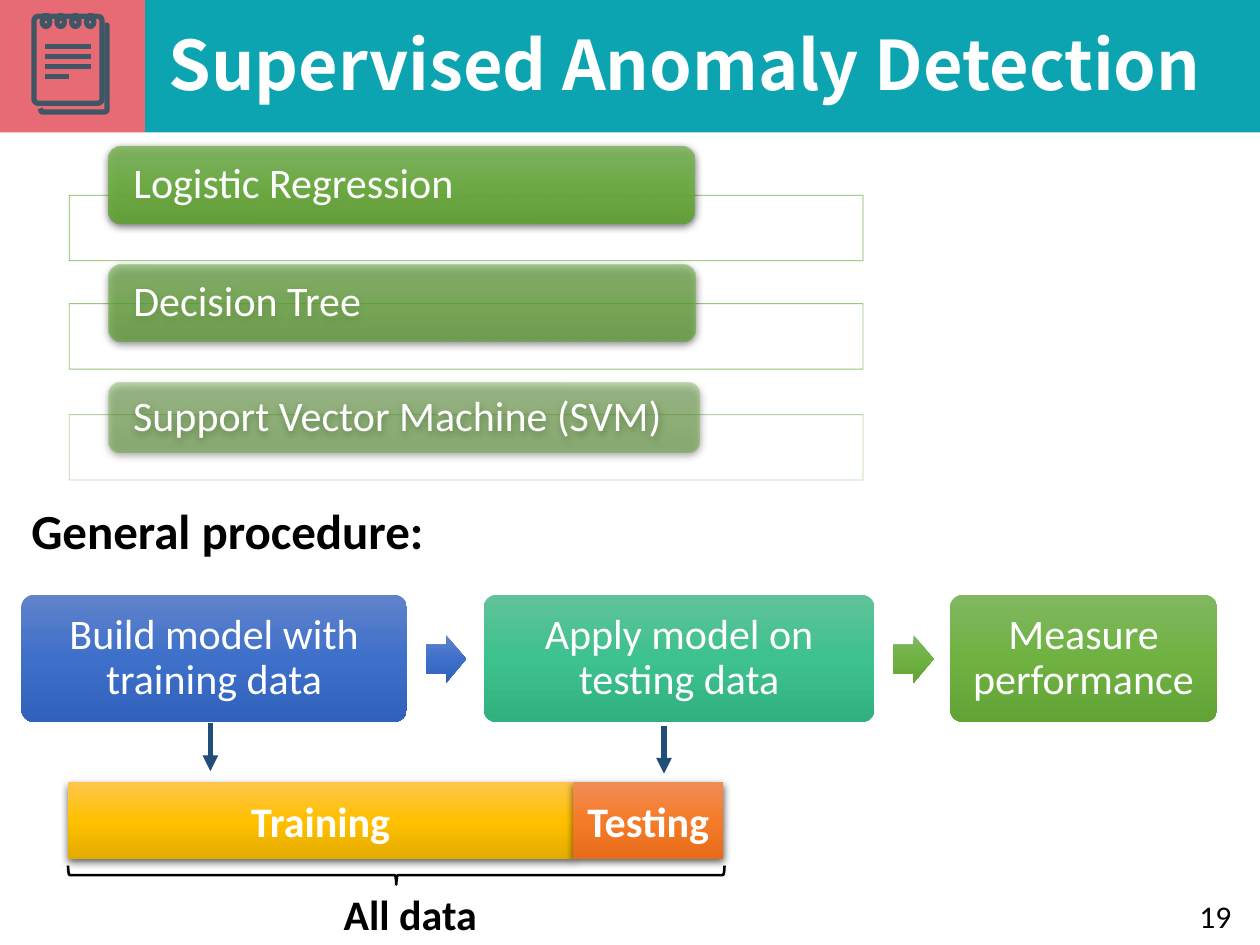
from lxml import etree
from pptx import Presentation
from pptx.dml.color import RGBColor
from pptx.enum.shapes import MSO_CONNECTOR, MSO_SHAPE
from pptx.enum.text import MSO_ANCHOR, PP_ALIGN
from pptx.oxml.ns import qn
from pptx.util import Inches, Pt

RECTANGLE = MSO_SHAPE.RECTANGLE
ROUNDED = MSO_SHAPE.ROUNDED_RECTANGLE
ARROW = MSO_SHAPE.RIGHT_ARROW
BRACE = MSO_SHAPE.LEFT_BRACE
OVAL = MSO_SHAPE.OVAL
STRAIGHT = MSO_CONNECTOR.STRAIGHT
TOP, MIDDLE = MSO_ANCHOR.TOP, MSO_ANCHOR.MIDDLE
LEFT, CENTER, RIGHT = PP_ALIGN.LEFT, PP_ALIGN.CENTER, PP_ALIGN.RIGHT

WHITE, BLACK, TEAL, CORAL = "FFFFFF", "000000", "0CA4B0", "E76B74"
SLATE, NAVY, LEAF = "415665", "1F4E79", "70AD47"
# Gradients run from top to bottom
GREEN = ("81B861", "6FB242", "62A336")
BLUE = ("6183CB", "3E70CA", "3062BB")
MINT = ("60C39A", "3DC18F", "31B080")
GOLD = ("FFC64B", "FFC000", "E3AB00")
ORANGE = ("F18C57", "F67B28", "E56C19")

presentation = Presentation()
presentation.slide_width, presentation.slide_height = Inches(10), Inches(7.5)
slide = presentation.slides.add_slide(presentation.slide_layouts[6])
# The grid has 100 columns and 75 rows
COLUMN = presentation.slide_width / 100
ROW = presentation.slide_height / 75


def style(shape, fill=None, line=None, width=1, fill_alpha=100, line_alpha=100, shadow=False):
    """Set fill (one colour or a gradient), outline, opacity and shadow."""
    shape.shadow.inherit = False
    if isinstance(fill, tuple):
        shape.fill.gradient()
        shape.fill.gradient_angle = 270
        stops = shape._element.spPr.find(".//" + qn("a:gsLst"))
        for stop in list(stops):
            stops.remove(stop)
        for index, colour in enumerate(fill):
            stop = etree.SubElement(stops, qn("a:gs"), pos=str(index * 50000))
            etree.SubElement(stop, qn("a:srgbClr"), val=colour)
    elif fill:
        shape.fill.solid()
        shape.fill.fore_color.rgb = RGBColor.from_string(fill)
    else:
        shape.fill.background()
    if line:
        shape.line.color.rgb = RGBColor.from_string(line)
        shape.line.width = Pt(width)
    else:
        shape.line.fill.background()
    for colour in shape._element.spPr.iter(qn("a:srgbClr")):
        in_line = any(parent.tag == qn("a:ln") for parent in colour.iterancestors())
        alpha = line_alpha if in_line else fill_alpha
        if alpha < 100:
            etree.SubElement(colour, qn("a:alpha"), val=str(alpha * 1000))
    if shadow:
        effects = shape._element.spPr.find(qn("a:effectLst"))
        outer = etree.SubElement(effects, qn("a:outerShdw"), blurRad=str(Pt(4.5)),
                                 dist=str(Pt(1.5)), dir="5400000", algn="ctr", rotWithShape="0")
        colour = etree.SubElement(outer, qn("a:srgbClr"), val=BLACK)
        etree.SubElement(colour, qn("a:alpha"), val="63000")


def write(shape, text, size=24, colour=WHITE, font="Calibri", bold=False, align=LEFT,
          anchor=MIDDLE, spacing=1.0, insets=(0.1, 0.05)):
    frame = shape.text_frame
    frame.word_wrap = True
    frame.vertical_anchor = anchor
    frame.margin_left = frame.margin_right = Inches(insets[0])
    frame.margin_top = frame.margin_bottom = Inches(insets[1])
    paragraph = frame.paragraphs[0]
    paragraph.alignment, paragraph.line_spacing = align, spacing
    run = paragraph.add_run()
    run.text = text
    run.font.name, run.font.size, run.font.bold = font, Pt(size), bold
    run.font.color.rgb = RGBColor.from_string(colour)
    properties = run._r.get_or_add_rPr()
    etree.SubElement(properties, qn("a:ea"), typeface=font)


shapes = slide.shapes

# Methods: a label on top of each empty frame, fading downwards
methods = [
    ("Logistic Regression", 15.5, 11.6, 46.5, 6.1, 90),
    ("Decision Tree", 24.1, 21, 46.6, 6.1, 70),
    ("Support Vector Machine (SVM)", 32.9, 30.4, 46.9, 5.5, 50),
]
for text, frame_top, top, width, height, alpha in methods:
    frame = shapes.add_shape(RECTANGLE, int(5.5 * COLUMN), int(frame_top * ROW),
                             int(63 * COLUMN), int(5.2 * ROW))
    style(frame, WHITE, LEAF, 0.5, fill_alpha=90, line_alpha=alpha)
    label = shapes.add_shape(ROUNDED, int(8.6 * COLUMN), int(top * ROW),
                             int(width * COLUMN), int(height * ROW))
    style(label, GREEN, fill_alpha=alpha, shadow=True)
    write(label, text, spacing=0.9, insets=(0.17, 0))

# Procedure: three steps with an arrow after each but the last
steps = [
    ("Build model with training data", 1.7, 30.6, BLUE, 33.8, BLUE),
    ("Apply model on testing data", 38.4, 31, MINT, 70.9, GREEN),
    ("Measure performance", 75.4, 21.2, GREEN, None, None),
]
for text, left, width, fill, arrow_left, arrow_fill in steps:
    step = shapes.add_shape(ROUNDED, int(left * COLUMN), int(47.2 * ROW),
                            int(width * COLUMN), int(10.1 * ROW))
    step.adjustments[0] = 0.1
    style(step, fill)
    write(step, text, align=CENTER, spacing=0.9, insets=(0.13, 0.13))
    if arrow_left:
        arrow = shapes.add_shape(ARROW, int(arrow_left * COLUMN), int(50.4 * ROW),
                                 int(3.2 * COLUMN), int(3.8 * ROW))
        arrow.adjustments[0] = 0.6
        style(arrow, arrow_fill)

# Data split bar
for text, left, width, fill in [("Training", 5.4, 40.1, GOLD), ("Testing", 45.5, 11.9, ORANGE)]:
    part = shapes.add_shape(RECTANGLE, int(left * COLUMN), int(62.1 * ROW),
                            int(width * COLUMN), int(6.1 * ROW))
    style(part, fill, shadow=True)
    write(part, text, bold=True, align=CENTER)

# Brace under the whole bar
brace = shapes.add_shape(BRACE, int(30.7 * COLUMN), int(43.4 * ROW),
                         int(1.5 * COLUMN), int(52.1 * ROW))
brace.rotation = 270
style(brace, line=BLACK, width=1.5)

# Title band and icon tile
for left, width, fill in [(11.5, 88.5, TEAL), (0, 11.5, CORAL)]:
    band = shapes.add_shape(RECTANGLE, int(left * COLUMN), 0, int(width * COLUMN), int(10.5 * ROW))
    style(band, fill)

# Free-standing text
texts = [
    ("Supervised Anomaly Detection", 12.7, 1.4, 87.3, 8,
     dict(size=39, font="Noto Sans CJK SC", bold=True, spacing=0.9, insets=(0.07, 0.04))),
    ("General procedure:", 1.5, 39.2, 79.4, 5.7,
     dict(size=28, colour=BLACK, bold=True, anchor=TOP)),
    ("All data", 26.3, 70, 12.6, 4.5, dict(colour=BLACK, bold=True, anchor=TOP)),
    ("19", 76.2, 70.7, 22.5, 4, dict(size=18, colour=BLACK, align=RIGHT)),
]
for text, left, top, width, height, text_format in texts:
    box = shapes.add_textbox(int(left * COLUMN), int(top * ROW),
                             int(width * COLUMN), int(height * ROW))
    write(box, text, **text_format)

# Notepad: back page edge (in tenths of a column), front page and ring holes
builder = shapes.build_freeform(32, 86, scale=COLUMN / 10)
builder.add_line_segments([(33, 89), (35, 89), (83, 89), (85, 88), (85, 85),
                           (85, 22), (85, 20), (83, 20)], close=False)
style(builder.convert_to_shape(), line=SLATE, width=3)
page = shapes.add_shape(ROUNDED, int(2.7 * COLUMN), int(1.3 * ROW),
                        int(5.4 * COLUMN), int(6.9 * ROW))
page.adjustments[0] = 0.06
style(page, line=SLATE, width=3)
ring_columns = [3.65 + 1.17 * index for index in range(4)]
for column in ring_columns:
    hole = shapes.add_shape(OVAL, int((column - 0.3) * COLUMN), int(1.4 * ROW),
                            int(0.6 * COLUMN), int(0.7 * ROW))
    style(hole, line=SLATE, width=3)

# Straight lines: notepad rings, notepad writing, arrows down to the data
lines = [(column, 1, column, 1.7, SLATE) for column in ring_columns]
lines += [(3.6, 3.7 + 0.8 * index, end, 3.7 + 0.8 * index, SLATE)
          for index, end in enumerate([7.2, 7.2, 7.2, 5.5])]
lines += [(16.7, 57.4, 16.7, 61.2, NAVY), (52.7, 57.6, 52.7, 61.4, NAVY)]
for start_x, start_y, end_x, end_y, colour in lines:
    connector = shapes.add_connector(STRAIGHT, int(start_x * COLUMN), int(start_y * ROW),
                                     int(end_x * COLUMN), int(end_y * ROW))
    connector.line.color.rgb = RGBColor.from_string(colour)
    connector.line.width = Pt(3)
    etree.SubElement(connector._element.spPr, qn("a:effectLst"))
    if colour == NAVY:
        etree.SubElement(connector.line._get_or_add_ln(), qn("a:tailEnd"), type="triangle")

presentation.save("out.pptx")
